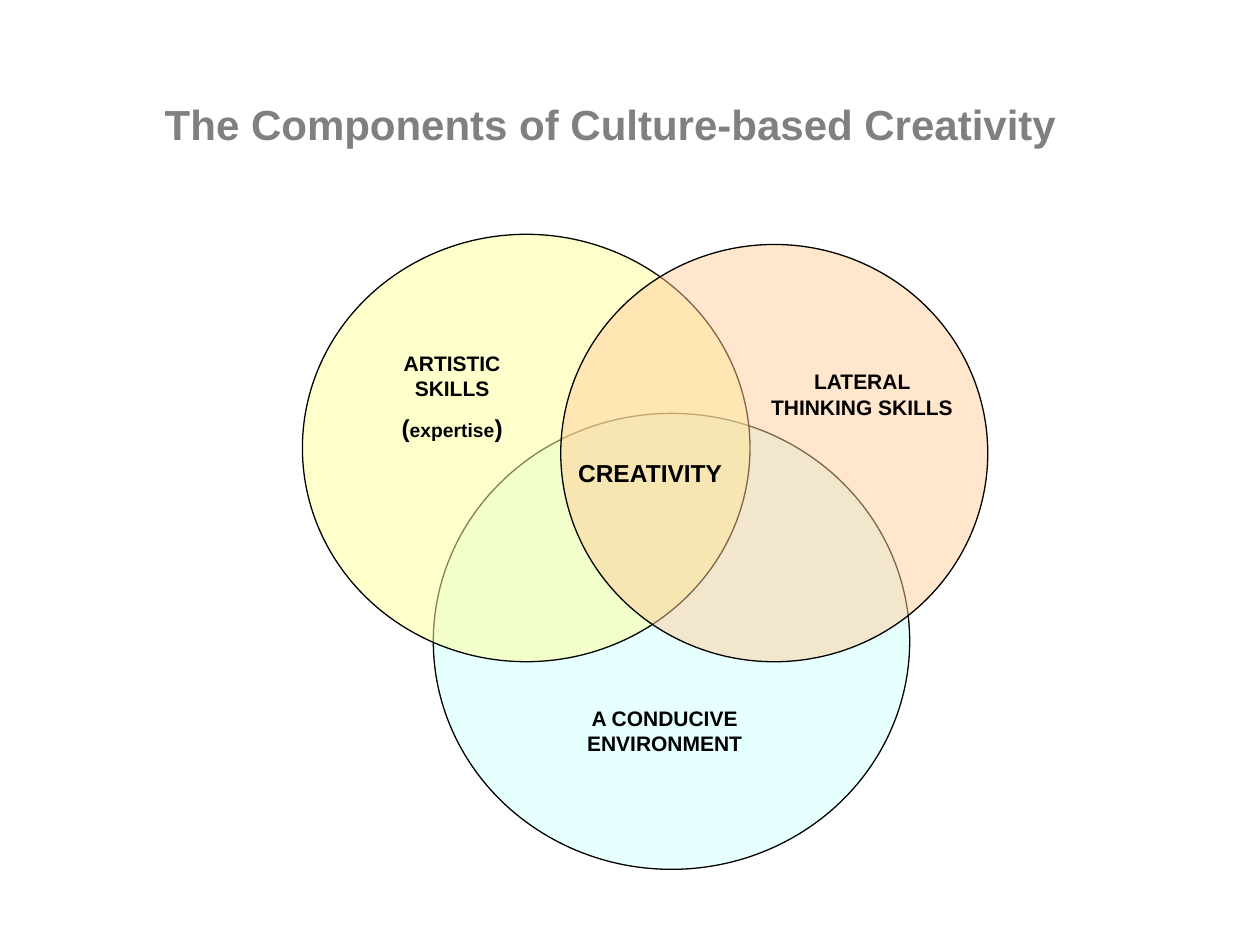
import pptx
import pptx.util
import pptx.dml.color
import pptx.enum.shapes
import pptx.enum.text
import pptx.oxml
import pptx.oxml.ns
from dataclasses import dataclass


@dataclass(frozen=True)
class Theme:
    font: str = "Arial"
    title: str = "808080"
    ink: str = "000000"
    yellow: str = "FFFF99"
    orange: str = "FFCC99"
    cyan: str = "CCFFFF"
    title_size: int = 24
    core_size: int = 14
    label_size: int = 12
    note_size: int = 11


THEME = Theme()
WIDTH, HEIGHT = 10, 7.5
TITLE_BOX = (0.75, 0.36, 8.19, 1.25)
VENN_BOX = (2.4, 1.86, 5.44, 5.04)

CIRCLES = [
    ((19.1, 28.2, 69.5, 71.8), THEME.cyan, 49),
    ((0, 0, 65.3, 67.3), THEME.yellow, 51),
    ((37.7, 1.6, 62.3, 65.7), THEME.orange, 49),
]
LABELS = [
    ((7.5, 17.3, 28.7, 17.1), [
        [("ARTISTIC SKILLS", THEME.label_size)],
        [("(", THEME.core_size), ("expertise", THEME.note_size), (")", THEME.core_size)],
    ]),
    ((66.5, 20.2, 30.3, 10.1), [[("LATERAL THINKING SKILLS", THEME.label_size)]]),
    ((37.7, 73.2, 30.3, 10.1), [[("A CONDUCIVE ENVIRONMENT", THEME.label_size)]]),
    ((37.7, 34.3, 26.1, 6.5), [[("CREATIVITY", THEME.core_size)]]),
]


def rgb(color):
    return pptx.dml.color.RGBColor.from_string(color)


def inches(box):
    return [pptx.util.Inches(v) for v in box]


def within(box, percent):
    x, y, w, h = box
    px, py, pw, ph = (v / 100 for v in percent)
    return inches((x + px * w, y + py * h, pw * w, ph * h))


def format_paragraph(p, color):
    p.alignment = pptx.enum.text.PP_ALIGN.CENTER
    p.font.name = THEME.font
    p.font.bold = True
    p.font.color.rgb = rgb(color)


def add_title(s, box, text):
    sp = s.shapes.title
    sp.left, sp.top, sp.width, sp.height = inches(box)
    tf = sp.text_frame
    tf.text = text
    tf.vertical_anchor = pptx.enum.text.MSO_ANCHOR.MIDDLE
    p = tf.paragraphs[0]
    format_paragraph(p, THEME.title)
    p.font.size = pptx.util.Pt(THEME.title_size)


def add_circle(s, box, color, opacity):
    sp = s.shapes.add_shape(pptx.enum.shapes.MSO_SHAPE.OVAL, *box)
    sp.shadow.inherit = False
    sp.fill.solid()
    sp.fill.fore_color.rgb = rgb(color)
    srgb = sp.fill._xPr.find(".//" + pptx.oxml.ns.qn("a:srgbClr"))
    srgb.append(pptx.oxml.parse_xml(
        f'<a:alpha {pptx.oxml.ns.nsdecls("a")} val="{opacity * 1000}"/>'))
    sp.line.color.rgb = rgb(THEME.ink)
    sp.line.width = pptx.util.Pt(0.75)


def add_label(s, box, paragraphs):
    tf = s.shapes.add_textbox(*box).text_frame
    tf.word_wrap = True
    tf.auto_size = pptx.enum.text.MSO_AUTO_SIZE.SHAPE_TO_FIT_TEXT
    for i, runs in enumerate(paragraphs):
        p = tf.add_paragraph() if i else tf.paragraphs[0]
        format_paragraph(p, THEME.ink)
        if i:
            p.space_before = pptx.util.Pt(7)
        for text, size in runs:
            r = p.add_run()
            r.text = text
            r.font.size = pptx.util.Pt(size)


def add_venn(s, box):
    for place, color, opacity in CIRCLES:
        add_circle(s, within(box, place), color, opacity)
    for place, paragraphs in LABELS:
        add_label(s, within(box, place), paragraphs)


def main():
    prs = pptx.Presentation()
    prs.slide_width, prs.slide_height = inches((WIDTH, HEIGHT))
    s = prs.slides.add_slide(prs.slide_layouts[5])
    add_title(s, TITLE_BOX, "The Components of Culture-based Creativity")
    add_venn(s, VENN_BOX)
    prs.save("out.pptx")


if __name__ == "__main__":
    main()
